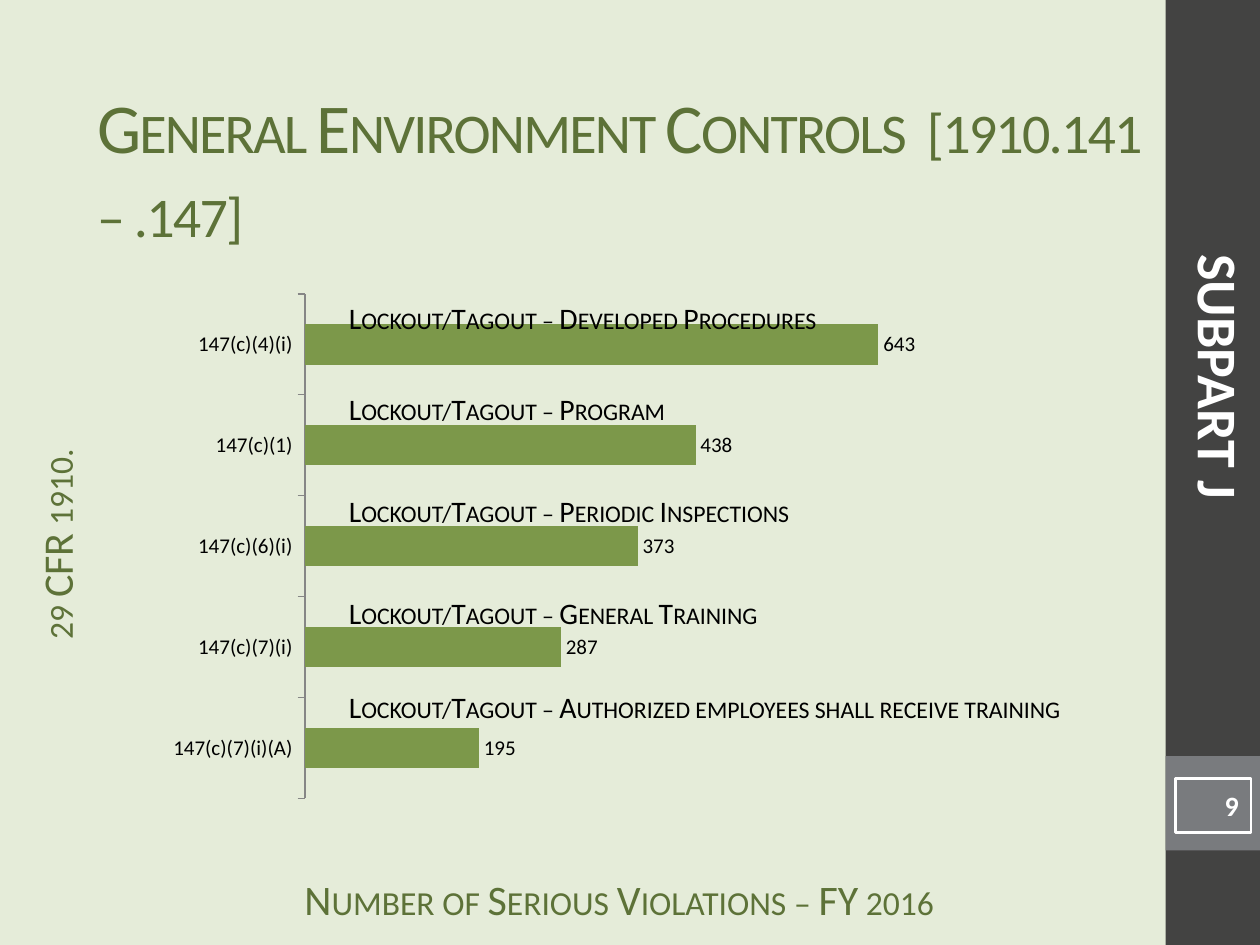
from pptx import Presentation
from pptx.chart.data import CategoryChartData
from pptx.dml.color import RGBColor
from pptx.enum.chart import XL_CHART_TYPE as ChartType, XL_LABEL_POSITION as LabelPos, XL_TICK_MARK as Tick
from pptx.enum.shapes import MSO_SHAPE as Shape
from pptx.enum.text import MSO_ANCHOR as Anchor, PP_ALIGN as Align
from pptx.util import Pt

PX = 9144  # 100 px to the inch
GREEN, BLACK, WHITE = "5D7238", "000000", "FFFFFF"


def rgb(code):
    return RGBColor.from_string(code)


def write(shape, words, size, color, align=Align.LEFT, bold=False, caps=None, spacing=None,
          rotation=0, wrap=True, **frame_format):
    frame = shape.text_frame
    frame.word_wrap = wrap
    for key, value in frame_format.items():
        setattr(frame, key, value)
    shape.rotation = rotation
    line = frame.paragraphs[0]
    line.alignment = align
    run = line.add_run()
    run.text = words
    for key, value in dict(name="Calibri", size=Pt(size), bold=bold).items():
        setattr(run.font, key, value)
    run.font.color.rgb = rgb(color)
    props = run.font._element
    if caps:
        props.set("cap", caps)
    if spacing:
        props.set("spc", str(spacing))


deck = Presentation()
deck.slide_width, deck.slide_height = 1000 * PX, 750 * PX
slide = deck.slides.add_slide(deck.slide_layouts[5])
slide.background.fill.solid()
slide.background.fill.fore_color.rgb = rgb("E5ECD9")
shapes = slide.shapes

# Side band with its page number block
for top, height, color in [(0, 750, "434342"), (600, 75, "797B7E")]:
    band = shapes.add_shape(Shape.RECTANGLE, 925 * PX, top * PX, 75 * PX, height * PX)
    band.shadow.inherit = False
    band.fill.solid()
    band.fill.fore_color.rgb = rgb(color)
    band.line.fill.background()

# Axis captions
for words, box, rotation in [
    ("Number of Serious Violations – FY 2016", (208, 693, 567, 33), 0),
    ("29 CFR 1910.", (-156, 403, 419, 58), 270),
]:
    caption = shapes.add_textbox(*[n * PX for n in box])
    write(caption, words, 24, GREEN, Align.CENTER, caps="small", rotation=rotation,
          margin_top=0, margin_bottom=5 * PX)

# Violations chart
data = CategoryChartData()
data.categories = ["147(c)(7)(i)(A)", "147(c)(7)(i)", "147(c)(6)(i)", "147(c)(1)", "147(c)(4)(i)"]
data.add_series("Series 1", [195, 287, 373, 438, 643])
chart = shapes.add_chart(ChartType.BAR_CLUSTERED, 125 * PX, 225 * PX, 625 * PX, 417 * PX, data).chart
chart.has_legend = chart.has_title = False
chart.font.name, chart.font.size = "Calibri", Pt(10)
chart.font.color.rgb = rgb(BLACK)

sections = chart.category_axis
sections.major_tick_mark = Tick.OUTSIDE
sections.tick_labels.font.size = Pt(12)
sections.format.line.color.rgb = rgb("868686")
counts = chart.value_axis
for key, value in dict(visible=False, has_major_gridlines=False,
                       minimum_scale=0, maximum_scale=700).items():
    setattr(counts, key, value)

bars = chart.plots[0]
bars.gap_width = 150
bars.vary_by_categories = False
bars.series[0].format.fill.solid()
bars.series[0].format.fill.fore_color.rgb = rgb("7C984A")
bars.has_data_labels = True
bars.data_labels.show_value = True
bars.data_labels.position = LabelPos.OUTSIDE_END
bars.data_labels.font.size = Pt(12)

# Title
title = shapes.title
title.left, title.top, title.width, title.height = [n * PX for n in (67, 58, 856, 150)]
write(title, "General Environment Controls  [1910.141 – .147]", 40, GREEN,
      caps="small", spacing=-100, vertical_anchor=Anchor.MIDDLE)

# Page number
page = shapes.add_shape(Shape.RECTANGLE, 933 * PX, 618 * PX, 60 * PX, 43 * PX)
page.shadow.inherit = False
page.fill.background()
page.line.color.rgb = rgb(WHITE)
page.line.width = Pt(1.5)
write(page, "9", 16, WHITE, Align.RIGHT, bold=True, vertical_anchor=Anchor.MIDDLE)

# Subpart name down the side band
subpart = shapes.add_textbox(669 * PX, 267 * PX, 598 * PX, 64 * PX)
write(subpart, "SUBPART J", 32, WHITE, Align.CENTER, bold=True, rotation=90)

# Violation names above the bars
for topic, top, width, wrap in [
    ("Developed Procedures", 233, 467, True),
    ("Program", 305, 550, True),
    ("Periodic Inspections", 386, 387, False),
    ("General Training", 467, 395, True),
    ("Authorized employees shall receive training", 542, 600, True),
]:
    violation = shapes.add_textbox(267 * PX, top * PX, width * PX, 39 * PX)
    write(violation, f"Lockout/Tagout – {topic}", 17, BLACK, caps="small", wrap=wrap)

deck.save("out.pptx")
